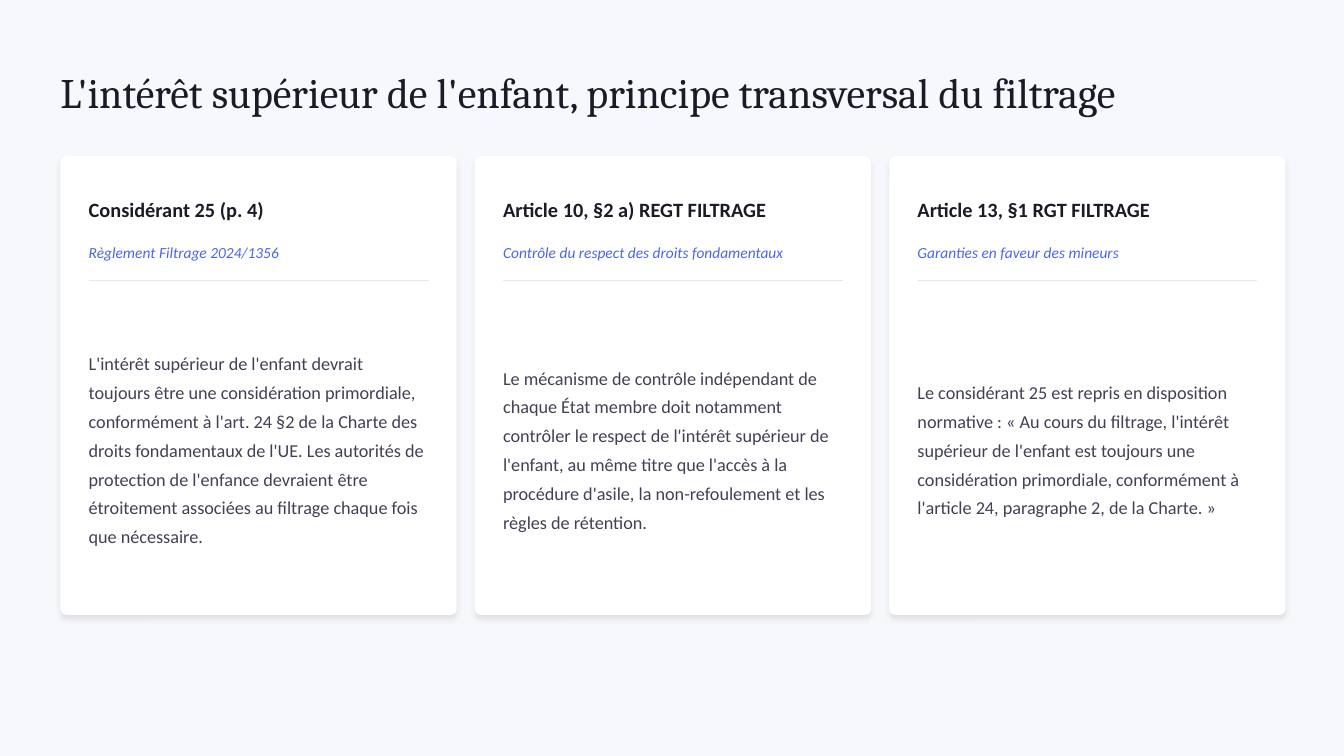
from lxml import etree
from pptx import Presentation, util as u
from pptx.dml.color import RGBColor
from pptx.enum import shapes, text
from pptx.oxml import ns

PX = 9144
INK = RGBColor(0x1B, 0x1B, 0x27)
BODY = RGBColor(0x40, 0x41, 0x55)
ACCENT = RGBColor(0x49, 0x67, 0xE9)
RULE = RGBColor(0xE4, 0xE6, 0xF2)
WHITE = RGBColor(0xFF, 0xFF, 0xFF)
PAGE = RGBColor(0xF7, 0xF8, 0xFC)

TITLE_FORMAT = {"name": "Cambria", "size": u.Pt(30)}
HEADING_FORMAT = {"name": "Calibri", "size": u.Pt(14.5), "bold": True}
SOURCE_FORMAT = {"name": "Calibri", "size": u.Pt(11), "italic": True}
BODY_FORMAT = {"name": "Calibri", "size": u.Pt(13)}

TITLE = "L'intérêt supérieur de l'enfant, principe transversal du filtrage"
CARDS = [
    ("Considérant 25 (p. 4)", "Règlement Filtrage 2024/1356",
     "L'intérêt supérieur de l'enfant devrait toujours être une considération "
     "primordiale, conformément à l'art. 24 §2 de la Charte des droits "
     "fondamentaux de l'UE. Les autorités de protection de l'enfance devraient "
     "être étroitement associées au filtrage chaque fois que nécessaire."),
    ("Article 10, §2 a) REGT FILTRAGE", "Contrôle du respect des droits fondamentaux",
     "Le mécanisme de contrôle indépendant de chaque État membre doit notamment "
     "contrôler le respect de l'intérêt supérieur de l'enfant, au même titre que "
     "l'accès à la procédure d'asile, la non-refoulement et les règles de rétention."),
    ("Article 13, §1 RGT FILTRAGE", "Garanties en faveur des mineurs",
     "Le considérant 25 est repris en disposition normative : « Au cours du "
     "filtrage, l'intérêt supérieur de l'enfant est toujours une considération "
     "primordiale, conformément à l'article 24, paragraphe 2, de la Charte. »"),
]


def px(*lengths):
    return [u.Emu(n * PX) for n in lengths]


def add_text(s, box, words, font, color, spacing=None):
    tf = s.shapes.add_textbox(*px(*box)).text_frame
    frame = {"word_wrap": True, "vertical_anchor": text.MSO_ANCHOR.MIDDLE,
             "margin_left": 0, "margin_top": 0, "margin_right": 0, "margin_bottom": 0}
    for name, value in frame.items():
        setattr(tf, name, value)
    p = tf.paragraphs[0]
    p.line_spacing = spacing
    r = p.add_run()
    r.text = words
    for name, value in font.items():
        setattr(r.font, name, value)
    r.font.color.rgb = color


def add_shadow(sp):
    sp.shadow.inherit = False
    effects = sp._element.spPr.find(ns.qn("a:effectLst"))
    shadow = etree.SubElement(effects, ns.qn("a:outerShdw"), blurRad=str(u.Pt(4)),
                              dist=str(u.Pt(3)), dir="5400000", algn="t", rotWithShape="0")
    color = etree.SubElement(shadow, ns.qn("a:srgbClr"), val=str(INK))
    etree.SubElement(color, ns.qn("a:alpha"), val="10000")


def add_rule(s, x, y, w):
    rule = s.shapes.add_connector(shapes.MSO_CONNECTOR.STRAIGHT, *px(x, y, x + w, y))
    rule.line.color.rgb = RULE
    rule.line.width = u.Pt(1)
    etree.SubElement(rule._element.spPr, ns.qn("a:effectLst"))


def add_card(s, box, heading, source, body):
    x, y, w, h = box
    sp = s.shapes.add_shape(shapes.MSO_SHAPE.ROUNDED_RECTANGLE, *px(*box))
    sp.adjustments[0] = 0.015
    sp.fill.solid()
    sp.fill.fore_color.rgb = WHITE
    sp.line.fill.background()
    add_shadow(sp)
    pad = 28
    left, inner = x + pad, w - 2 * pad
    add_text(s, (left, y + 25, inner, 55), heading, HEADING_FORMAT, INK, 1.05)
    add_text(s, (left, y + 75, inner, 40), source, SOURCE_FORMAT, ACCENT)
    add_rule(s, left, y + 123, inner)
    add_text(s, (left, y + 143, inner, h - 165), body, BODY_FORMAT, BODY, 1.32)


def add_cards(s, box, gap):
    x, y, w, h = box
    card_w = (w - gap * (len(CARDS) - 1)) // len(CARDS)
    for i, card in enumerate(CARDS):
        add_card(s, (x + i * (card_w + gap), y, card_w, h), *card)


def main():
    prs = Presentation()
    prs.slide_width, prs.slide_height = px(1333, 750)
    s = prs.slides.add_slide(prs.slide_layouts[6])
    s.background.fill.solid()
    s.background.fill.fore_color.rgb = PAGE
    add_text(s, (60, 45, 1213, 90), TITLE, TITLE_FORMAT, INK, 1.04)
    add_cards(s, (60, 155, 1215, 455), 18)
    prs.save("out.pptx")


if __name__ == "__main__":
    main()
